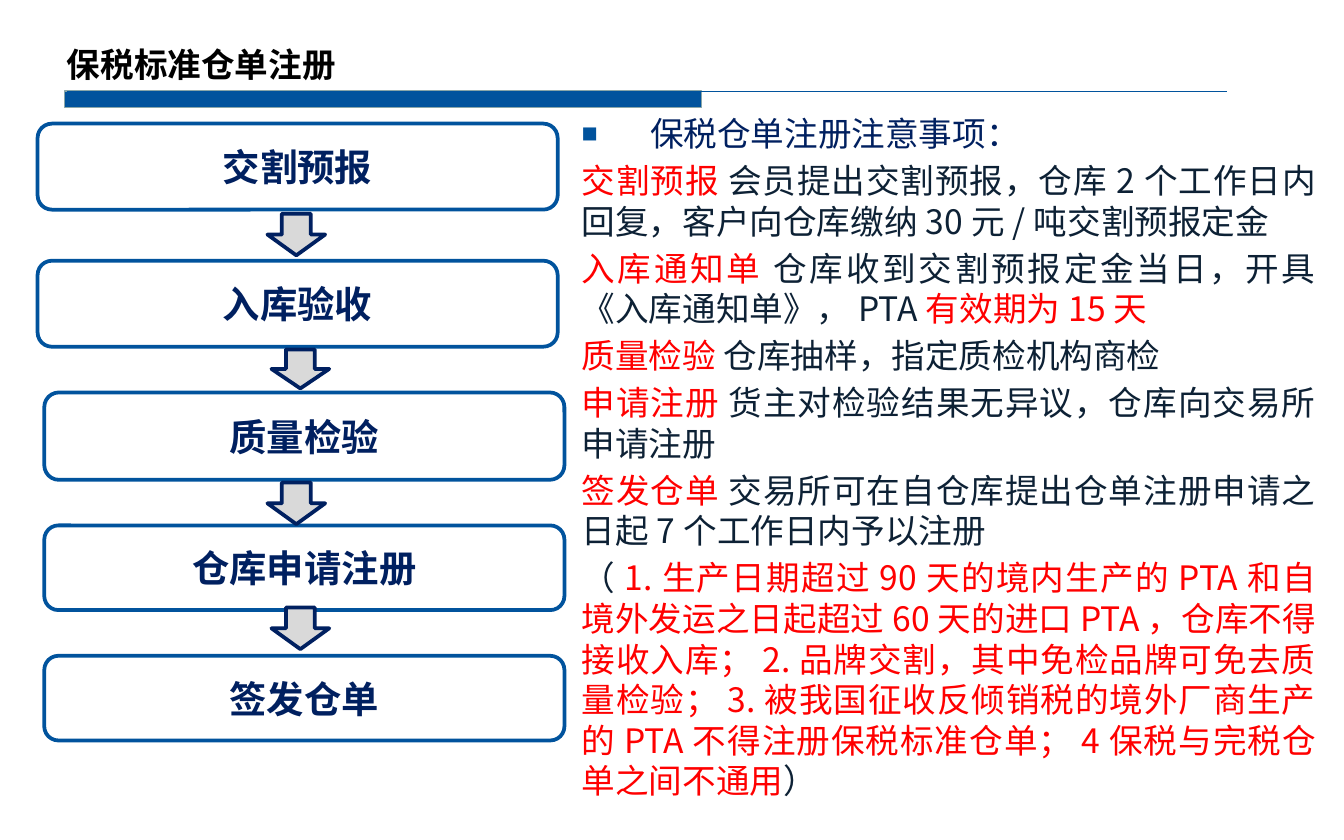
from lxml import etree
from pptx import Presentation
from pptx.dml.color import RGBColor
from pptx.enum.shapes import MSO_CONNECTOR, MSO_SHAPE
from pptx.enum.text import MSO_ANCHOR, PP_ALIGN
from pptx.oxml.ns import qn
from pptx.util import Inches, Pt

FONT = "Noto Sans CJK SC"
BLUE = RGBColor(0x01, 0x53, 0x9D)
NAVY = RGBColor(0x00, 0x20, 0x60)
INK = RGBColor(0x0D, 0x21, 0x35)
RED = RGBColor(0xFF, 0x00, 0x00)
BLACK = RGBColor(0x00, 0x00, 0x00)
WHITE = RGBColor(0xFF, 0xFF, 0xFF)
GREY = RGBColor(0xD9, 0xD9, 0xD9)
TEAL = RGBColor(0x8A, 0xA6, 0xA8)


def add_run(p, text, size, color, bold=False):
    r = p.add_run()
    r.text = text
    r.font.size = Pt(size)
    r.font.bold = bold
    r.font.color.rgb = color
    r.font.name = FONT
    etree.SubElement(r.font._element, qn("a:ea"), typeface=FONT)


def add_box(kind, left, top, width, height, fill, line, weight):
    sp = slide.shapes.add_shape(kind, Inches(left), Inches(top), Inches(width), Inches(height))
    sp.shadow.inherit = False
    sp.fill.solid()
    sp.fill.fore_color.rgb = fill
    sp.line.color.rgb = line
    sp.line.width = Pt(weight)
    return sp


prs = Presentation()
prs.slide_width, prs.slide_height = Inches(10), Inches(6.25)
slide = prs.slides.add_slide(prs.slide_layouts[6])

# Notes on the right
notes = [
    [("保税仓单注册注意事项：", NAVY)],
    [("交割预报", RED), (" 会员提出交割预报，仓库2个工作日内回复，客户向仓库缴纳30元/吨交割预报定金", INK)],
    [("入库通知单", RED), (" 仓库收到交割预报定金当日，开具《入库通知单》，PTA", INK), ("有效期为15天", RED)],
    [("质量检验", RED), (" 仓库抽样，指定质检机构商检", INK)],
    [("申请注册", RED), (" 货主对检验结果无异议，仓库向交易所申请注册", INK)],
    [("签发仓单", RED), (" 交易所可在自仓库提出仓单注册申请之日起7个工作日内予以注册", INK)],
    [("（", INK),
     ("1.生产日期超过90天的境内生产的PTA和自境外发运之日起超过60天的进口PTA，仓库不得接收入库；"
      "2.品牌交割，其中免检品牌可免去质量检验；3.被我国征收反倾销税的境外厂商生产的PTA不得注册保税标准仓单；"
      "4保税与完税仓单之间不通用", RED),
     ("）", INK)],
]
tf = slide.shapes.add_textbox(Inches(4.23), Inches(0.79), Inches(5.66), Inches(4.94)).text_frame
tf.word_wrap = True
for i, runs in enumerate(notes):
    p = tf.paragraphs[0] if i == 0 else tf.add_paragraph()
    if i == 0:
        pPr = p._p.get_or_add_pPr()
        pPr.set("marL", str(Inches(0.51)))
        pPr.set("indent", str(-Inches(0.51)))
        clr = etree.SubElement(pPr, qn("a:buClr"))
        etree.SubElement(clr, qn("a:srgbClr"), val=str(BLUE))
        etree.SubElement(pPr, qn("a:buSzPct"), val="80000")
        etree.SubElement(pPr, qn("a:buFont"), typeface="Arial")
        etree.SubElement(pPr, qn("a:buChar"), char="■")
    else:
        p.space_before = Pt(3.5)
    p.alignment = PP_ALIGN.JUSTIFY
    p.line_spacing = Pt(21.7)
    for text, color in runs:
        add_run(p, text, 18, color)

# Process steps on the left
steps = [
    ("交割预报", 0.28, 0.92, 0.64),
    ("入库验收", 0.28, 1.94, 0.64),
    ("质量检验", 0.33, 2.92, 0.65),
    ("仓库申请注册", 0.33, 3.91, 0.63),
    ("签发仓单", 0.33, 4.88, 0.63),
]
for text, left, top, height in steps:
    sp = add_box(MSO_SHAPE.ROUNDED_RECTANGLE, left, top, 3.87, height, WHITE, BLUE, 2)
    sp.text_frame.vertical_anchor = MSO_ANCHOR.MIDDLE
    p = sp.text_frame.paragraphs[0]
    p.alignment = PP_ALIGN.CENTER
    add_run(p, text, 20, NAVY, bold=True)

for left, top, height in [(1.99, 1.59, 0.31), (2.02, 2.6, 0.29), (1.99, 3.59, 0.31), (2.02, 4.52, 0.31)]:
    add_box(MSO_SHAPE.DOWN_ARROW, left, top, 0.43, height, GREY, NAVY, 2)

# Title with its bar and rule
add_box(MSO_SHAPE.RECTANGLE, 0.48, 0.68, 4.74, 0.12, BLUE, TEAL, 1)
rule = slide.shapes.add_connector(MSO_CONNECTOR.STRAIGHT, Inches(0.5), Inches(0.68), Inches(9.13), Inches(0.68))
rule.line.color.rgb = BLUE
rule.line.width = Pt(0.5)
etree.SubElement(rule._element.spPr, qn("a:effectLst"))

tf = slide.shapes.add_textbox(Inches(0.4), Inches(0.28), Inches(2.24), Inches(0.4)).text_frame
tf.word_wrap = False
p = tf.paragraphs[0]
p.line_spacing = Pt(21.7)
add_run(p, "保税标准仓单注册", 18, BLACK, bold=True)

prs.save("out.pptx")
